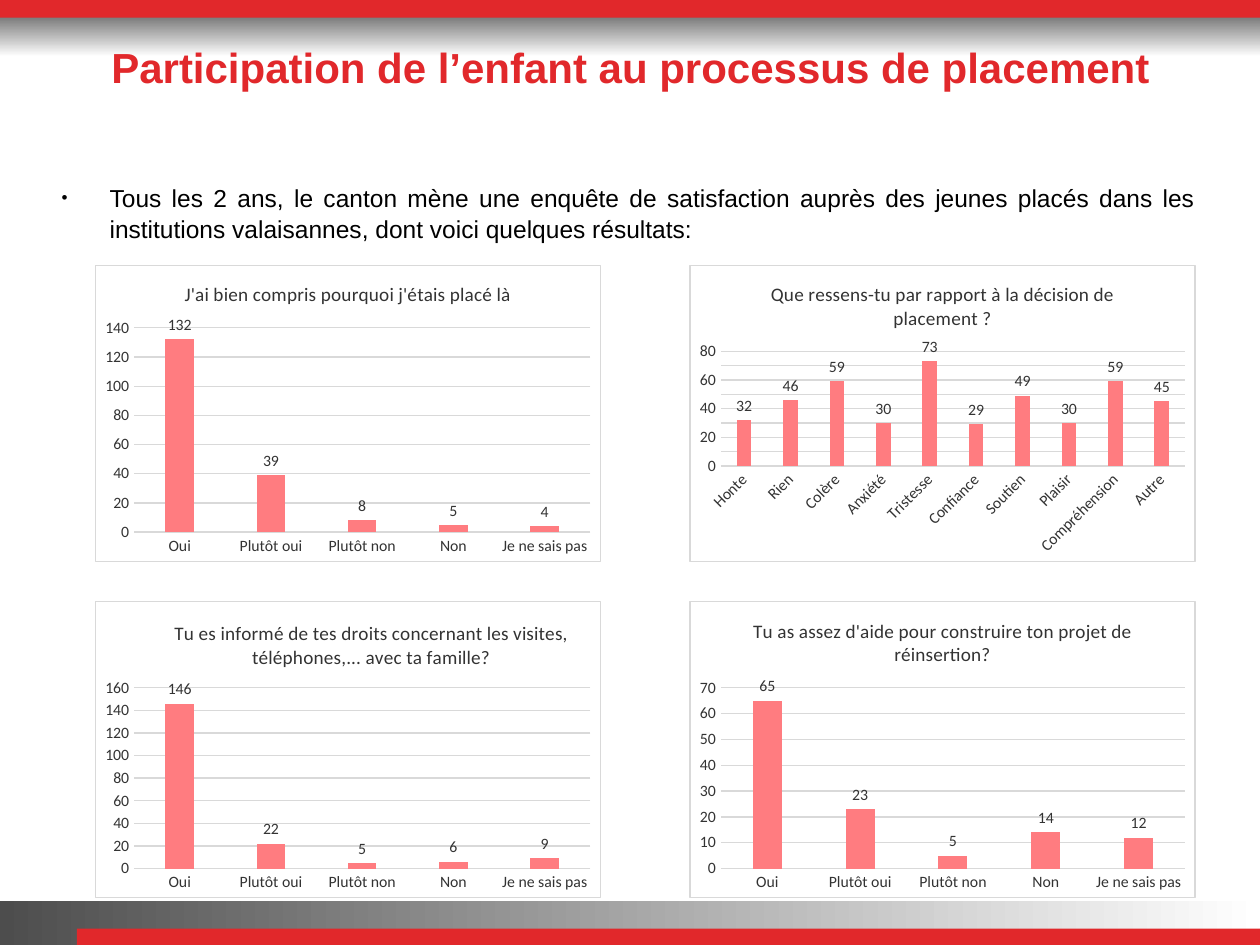
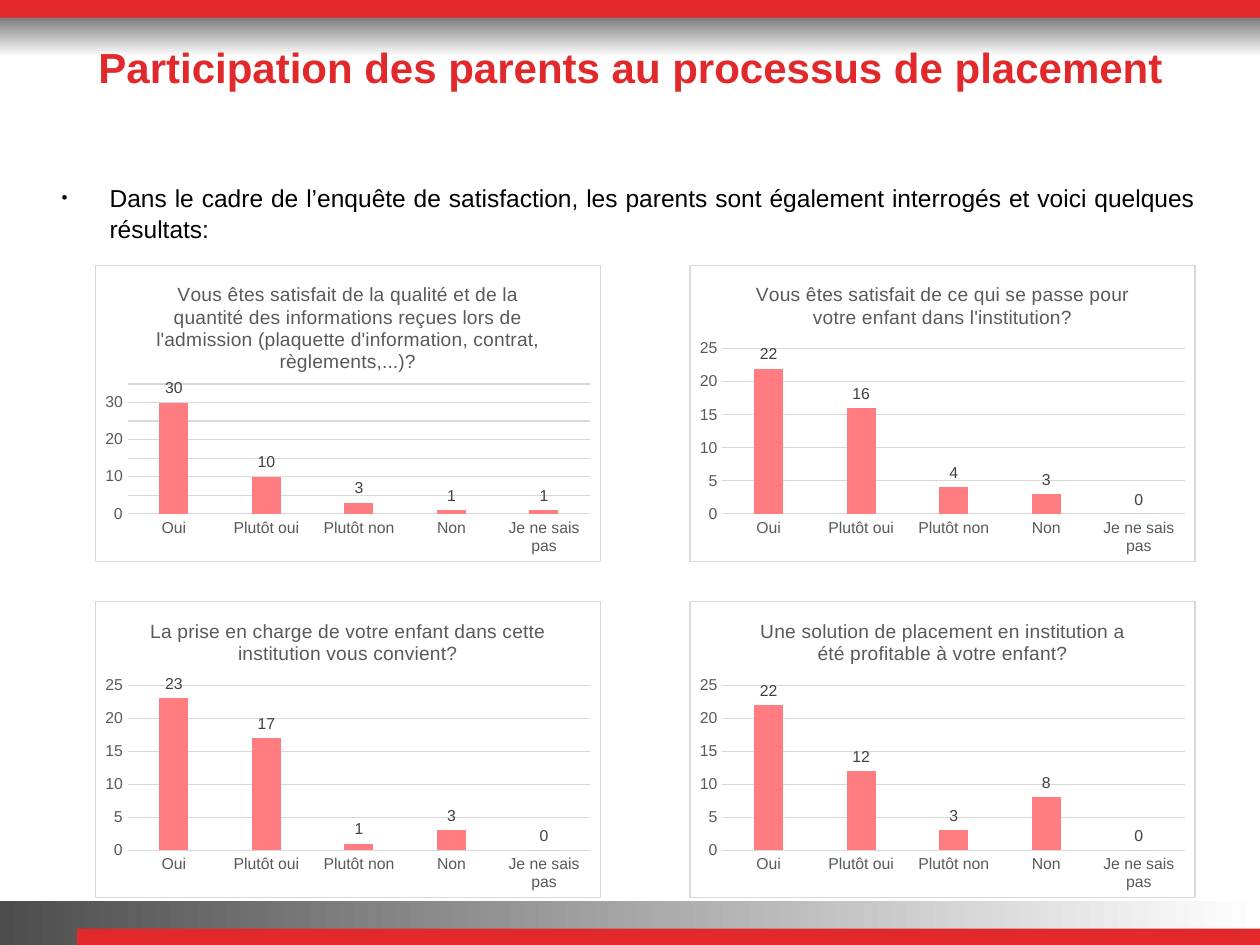
from lxml.etree import SubElement
from pptx import Presentation
from pptx.chart.data import CategoryChartData
from pptx.dml.color import RGBColor
from pptx.enum.chart import XL_CHART_TYPE, XL_LABEL_POSITION, XL_TICK_MARK
from pptx.enum.shapes import MSO_SHAPE
from pptx.enum.text import MSO_ANCHOR, PP_ALIGN
from pptx.oxml import parse_xml
from pptx.oxml.ns import nsdecls, qn
from pptx.util import Inches, Pt

COLORS = {"red": "E1282B", "bar": "FF7C80", "rule": "D9D9D9", "white": "FFFFFF", "black": "000000",
          "top_shade": "5F5F5F", "bottom_shade": "4D4D4D",
          "ink": "333333", "grey": "595959", "label": "404040"}
ANSWERS = ["Oui", "Plutôt oui", "Plutôt non", "Non", "Je ne sais pas"]
FEELINGS = ["Honte", "Rien", "Colère", "Anxiété", "Tristesse",
            "Confiance", "Soutien", "Plaisir", "Compréhension", "Autre"]
COL_LEFT, COL_STEP, CHART_W = 0.75, 4.72, 4.02
ROW_TOP, ROW_STEP, CHART_H = 2.1, 2.67, 2.36

SLIDES = [
    {"title": "Participation de l’enfant au processus de placement",
     "intro": "Tous les 2 ans, le canton mène une enquête de satisfaction auprès des jeunes placés "
              "dans les institutions valaisannes, dont voici quelques résultats:",
     "font": "Calibri", "text": "ink", "label": "ink",
     "charts": [
         ("J'ai bien compris pourquoi j'étais placé là", ANSWERS, [132, 39, 8, 5, 4], None),
         ("Que ressens-tu par rapport à la décision de placement ?", FEELINGS,
          [32, 46, 59, 30, 73, 29, 49, 30, 59, 45], None),
         ("Tu es informé de tes droits concernant les visites, téléphones,... avec ta famille?",
          ANSWERS, [146, 22, 5, 6, 9], (0.15, 0.05)),
         ("Tu as assez d'aide pour construire ton projet de réinsertion?",
          ANSWERS, [65, 23, 5, 14, 12], None)]},
    {"title": "Participation des parents au processus de placement",
     "intro": "Dans le cadre de l’enquête de satisfaction, les parents sont également interrogés "
              "et voici quelques résultats:",
     "font": "Arial", "text": "grey", "label": "label",
     "charts": [
         ("Vous êtes satisfait de la qualité et de la quantité des informations reçues lors de "
          "l'admission (plaquette d'information, contrat, règlements,...)?",
          ANSWERS, [30, 10, 3, 1, 1], None),
         ("Vous êtes satisfait de ce qui se passe pour votre enfant dans l'institution?",
          ANSWERS, [22, 16, 4, 3, 0], None),
         ("La prise en charge de votre enfant dans cette institution vous convient?",
          ANSWERS, [23, 17, 1, 3, 0], None),
         ("Une solution de placement en institution a été profitable à votre enfant?",
          ANSWERS, [22, 12, 3, 8, 0], None)]},
]
BANDS = [
    (0, 0.07, 10, 0.38, "top_shade", 270),
    (0, 0, 10, 0.14, "red", None),
    (0, 7.15, 10, 0.35, "bottom_shade", 0),
    (0.61, 7.37, 9.39, 0.13, "red", None),
]


def rgb(name):
    return RGBColor.from_string(COLORS[name])


def style(font, color, **values):
    font.color.rgb = rgb(color)
    for name, value in values.items():
        setattr(font, name, value)


prs = Presentation()
prs.slide_width, prs.slide_height = Inches(10), Inches(7.5)
layout = prs.slide_layouts[5]

for number, page in enumerate(SLIDES):
    s = prs.slides.add_slide(layout)
    if number == 0:
        for i, (x, y, w, h, color, angle) in enumerate(BANDS):
            sp = s.shapes.add_shape(MSO_SHAPE.RECTANGLE, Inches(x), Inches(y), Inches(w), Inches(h))
            sp.shadow.inherit = False
            sp.line.fill.background()
            if angle is None:
                sp.fill.solid()
                sp.fill.fore_color.rgb = rgb(color)
            else:
                sp.fill.gradient()
                sp.fill.gradient_angle = angle
                for stop, shade in zip(sp.fill.gradient_stops, (color, "white")):
                    stop.color.rgb = rgb(shade)
            layout.shapes._spTree.insert(2 + i, sp._element)

    title = s.shapes.title
    title.left, title.top, title.width, title.height = map(Inches, (0.39, 0.28, 9.23, 0.5))
    tf = title.text_frame
    tf.text = page["title"]
    tf.vertical_anchor = MSO_ANCHOR.MIDDLE
    p = tf.paragraphs[0]
    p.alignment = PP_ALIGN.CENTER
    style(p.runs[0].font, "red", size=Pt(24), name="Arial", bold=True)

    tf = s.shapes.add_textbox(Inches(0.49), Inches(1.44), Inches(9), Inches(0.5)).text_frame
    for name, value in {"word_wrap": True, "margin_left": 0, "margin_right": 0,
                        "margin_top": 0, "margin_bottom": 0}.items():
        setattr(tf, name, value)
    p = tf.paragraphs[0]
    p.alignment = PP_ALIGN.JUSTIFY
    p.line_spacing = 1.06
    pPr = p._p.get_or_add_pPr()
    pPr.set("marL", str(Inches(0.38)))
    pPr.set("indent", str(-Inches(0.38)))
    SubElement(pPr, qn("a:buSzPct")).set("val", "70000")
    SubElement(pPr, qn("a:buFont")).set("typeface", "Arial")
    SubElement(pPr, qn("a:buChar")).set("char", "•")
    r = p.add_run()
    r.text = page["intro"]
    style(r.font, "black", size=Pt(14), name="Arial")

    for i, (question, categories, values, title_at) in enumerate(page["charts"]):
        row, col = divmod(i, 2)
        data = CategoryChartData()
        data.categories = categories
        data.add_series("Series 1", values)
        chart = s.shapes.add_chart(
            XL_CHART_TYPE.COLUMN_CLUSTERED,
            Inches(COL_LEFT + col * COL_STEP), Inches(ROW_TOP + row * ROW_STEP),
            Inches(CHART_W), Inches(CHART_H), data).chart
        style(chart.font, "black", size=Pt(10), name=page["font"])
        chart._chartSpace.find(qn("c:chart")).addnext(parse_xml(
            f'<c:spPr {nsdecls("c", "a")}>'
            f'<a:solidFill><a:srgbClr val="{COLORS["white"]}"/></a:solidFill>'
            f'<a:ln w="{Pt(0.75)}"><a:solidFill><a:srgbClr val="{COLORS["rule"]}"/></a:solidFill></a:ln>'
            '</c:spPr>'))
        chart.has_legend = False
        chart.has_title = True
        heading = chart.chart_title
        heading.include_in_layout = False
        p = heading.text_frame.paragraphs[0]
        r = p.add_run()
        r.text = question
        style(r.font, page["text"], size=Pt(11), name=page["font"], bold=False)
        if title_at:
            for old in heading._element.findall(qn("c:layout")):
                heading._element.remove(old)
            heading._element.find(qn("c:tx")).addnext(parse_xml(
                f'<c:layout {nsdecls("c")}><c:manualLayout>'
                '<c:xMode val="edge"/><c:yMode val="edge"/>'
                f'<c:x val="{title_at[0]}"/><c:y val="{title_at[1]}"/>'
                '</c:manualLayout></c:layout>'))

        for axis in (chart.category_axis, chart.value_axis):
            axis.major_tick_mark = axis.minor_tick_mark = XL_TICK_MARK.NONE
            style(axis.tick_labels.font, page["text"], size=Pt(9), name=page["font"])
            axis._element.find(qn("c:txPr")).find(qn("a:bodyPr")).set("rot", "-60000000")
        chart.value_axis.format.line.fill.background()
        for line in (chart.category_axis.format.line, chart.value_axis.major_gridlines.format.line):
            line.color.rgb = rgb("rule")
            line.width = Pt(0.75)

        plot = chart.plots[0]
        plot.gap_width, plot.overlap, plot.vary_by_categories = 219, -27, False
        fill = plot.series[0].format.fill
        fill.solid()
        fill.fore_color.rgb = rgb("bar")
        plot.has_data_labels = True
        labels = plot.data_labels
        labels.show_value = True
        labels.position = XL_LABEL_POSITION.OUTSIDE_END
        style(labels.font, page["label"], size=Pt(9), name=page["font"])

prs.save("out.pptx")
